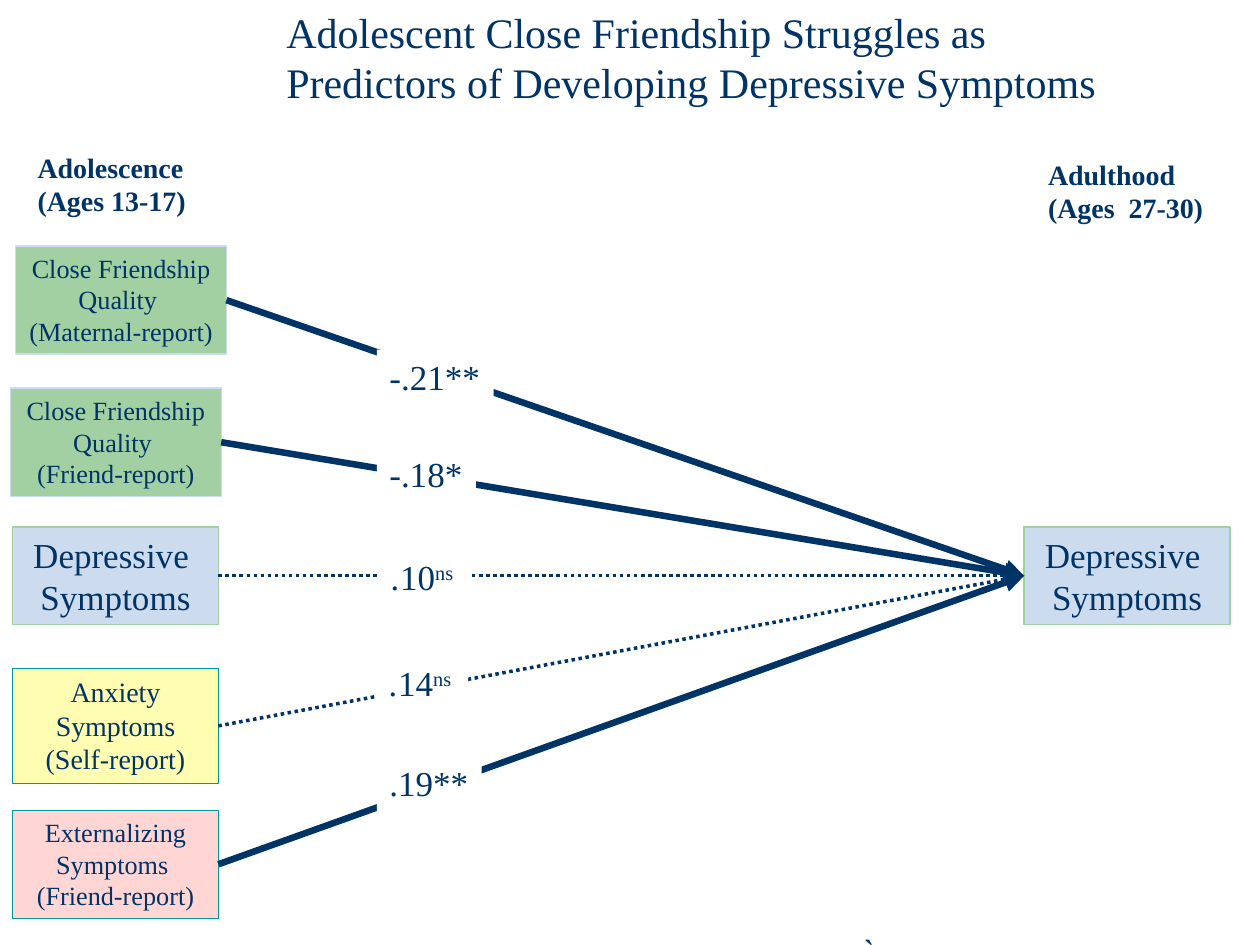
"""Build a path diagram of adolescent predictors of adult depressive symptoms."""
from lxml import etree
from pptx import Presentation
from pptx.dml.color import RGBColor
from pptx.enum.dml import MSO_LINE
from pptx.enum.shapes import MSO_CONNECTOR, MSO_SHAPE
from pptx.enum.text import MSO_ANCHOR, MSO_AUTO_SIZE, PP_ALIGN
from pptx.oxml.ns import qn
from pptx.util import Pt

RECT = MSO_SHAPE.RECTANGLE
STRAIGHT = MSO_CONNECTOR.STRAIGHT
DOTS = MSO_LINE.ROUND_DOT
TOP = MSO_ANCHOR.TOP
NO_FIT = MSO_AUTO_SIZE.NONE
LEFT, CENTER = PP_ALIGN.LEFT, PP_ALIGN.CENTER
NAVY, GREEN, BLUE, TEAL, WHITE = "003366", "A2D0A2", "CCDCEE", "009999", "FFFFFF"


def color(value):
    """Turn a hex string into a colour."""
    return RGBColor.from_string(value)


def write(shape, lines, size, align=LEFT, **style):
    """Fill a shape with lines, each a list of (text, format) runs or a string."""
    tf = shape.text_frame
    frame = {"word_wrap": False, "auto_size": NO_FIT, "vertical_anchor": TOP}
    for name, value in frame.items():
        setattr(tf, name, value)
    for i, line in enumerate(lines):
        p = tf.add_paragraph() if i else tf.paragraphs[0]
        p.alignment = align
        for text, extra in [(line, {})] if isinstance(line, str) else line:
            r = p.add_run()
            r.text = text
            r.font.color.rgb = color(NAVY)
            font = {"name": "Times New Roman", "size": Pt(size), **style, **extra}
            for name, value in font.items():
                if name == "baseline":
                    r._r.get_or_add_rPr().set(name, value)
                else:
                    setattr(r.font, name, value)


prs = Presentation()
prs.slide_width, prs.slide_height = Pt(720), Pt(540)
s = prs.slides.add_slide(prs.slide_layouts[5])

title = s.shapes.title
place = {"left": 156.4, "top": 0, "width": 481.6, "height": 65.5}
for name, value in place.items():
    setattr(title, name, Pt(value))
write(title, ["Adolescent Close Friendship Struggles as",
              "Predictors of Developing Depressive Symptoms"], 24)

texts = [
    (14.4, 82.2, 100, 46, ["Adolescence", "(Ages 13-17)"], 16, {"bold": True}),
    (591.8, 86.4, 104.4, 46, ["Adulthood", "(Ages  27-30)"], 16, {"bold": True}),
    (484.6, 527.8, 20.9, 31.7, ["`"], 20, {"italic": True}),
]
for x, y, w, h, lines, size, style in texts:
    sp = s.shapes.add_textbox(Pt(x), Pt(y), Pt(w), Pt(h))
    write(sp, lines, size, **style)

depressive = ["Depressive ", "Symptoms"]
friendship = ["Close Friendship", "Quality "]
boxes = [
    (9, 140.6, 120.4, 61.8, GREEN, BLUE, friendship + ["(Maternal-report)"], 15),
    (6, 221.8, 120.4, 61.8, GREEN, BLUE, friendship + ["(Friend-report)"], 15),
    (7.2, 301.2, 117.6, 55.6, BLUE, GREEN, depressive, 20),
    (7.2, 382, 117.6, 65.6, "FFFDB1", TEAL,
     ["Anxiety", "Symptoms", "(Self-report)"], 16),
    (7.2, 463, 117.6, 61.8, "FFD6D4", TEAL,
     ["Externalizing", "Symptoms ", "(Friend-report)"], 15),
    (585.2, 301.2, 117.6, 55.6, BLUE, GREEN, depressive, 20),
]
shapes = []
for x, y, w, h, fill, edge, lines, size in boxes:
    sp = s.shapes.add_shape(RECT, Pt(x), Pt(y), Pt(w), Pt(h))
    sp.shadow.inherit = False
    sp.fill.solid()
    sp.fill.fore_color.rgb = color(fill)
    sp.line.color.rgb = color(edge)
    sp.line.width = Pt(0.75)
    write(sp, lines, size, CENTER)
    shapes.append(sp)

*predictors, outcome = shapes
for predictor, dotted in zip(predictors, (False, False, True, True, False)):
    line = s.shapes.add_connector(STRAIGHT, 0, 0, 0, 0)
    line.begin_connect(predictor, 3)
    line.end_connect(outcome, 1)
    line.line.color.rgb = color(NAVY)
    line.line.width = Pt(2 if dotted else 3.75)
    if dotted:
        line.line.dash_style = DOTS
    etree.SubElement(line.line._get_or_add_ln(), qn("a:tailEnd"), type="triangle")
    etree.SubElement(line._element.spPr, qn("a:effectLst"))

italic, superscript = {"italic": True}, {"baseline": "30000"}
labels = [
    (215.4, 199.8, 66.7, ["-.21**"]),
    (215.4, 255, 56.6, [[("-", italic), (".18*", {})]]),
    (216.6, 314, 52.2, [[(".", italic), ("10", {}), ("ns", superscript)]]),
    (215.4, 374.6, 52.2, [[(".", italic), ("14", {}), ("ns", superscript)]]),
    (215.4, 431.8, 59.8, [".19**"]),
]
for x, y, w, lines in labels:
    sp = s.shapes.add_shape(RECT, Pt(x), Pt(y), Pt(w), Pt(31.6))
    sp.shadow.inherit = False
    sp.fill.solid()
    sp.fill.fore_color.rgb = color(WHITE)
    sp.line.fill.background()
    write(sp, lines, 20)

prs.save("out.pptx")
